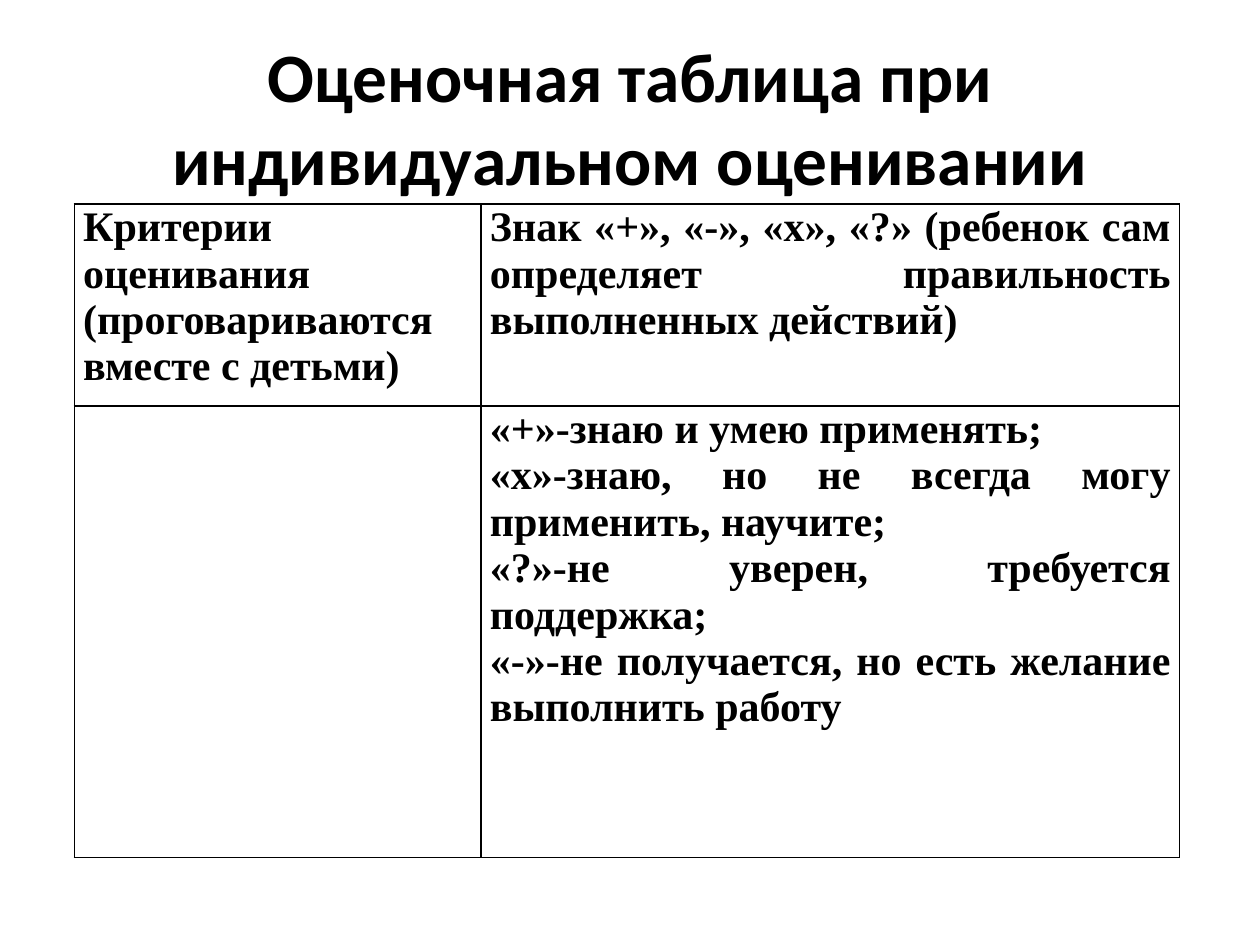
from lxml import etree
from pptx import Presentation
from pptx.dml.color import RGBColor
from pptx.enum import text
from pptx.oxml import ns
from pptx.util import Pt

BLACK = RGBColor(0, 0, 0)
WHITE = RGBColor(255, 255, 255)

TITLE = "Оценочная таблица при индивидуальном оценивании"
ROWS = [
    [
        ["Критерии оценивания (проговариваются вместе с детьми)"],
        ["Знак «+», «-», «х», «?» (ребенок сам определяет правильность выполненных действий)"],
    ],
    [
        [],
        [
            "«+»-знаю и умею применять;",
            "«х»-знаю, но не всегда могу применить, научите;",
            "«?»-не уверен, требуется поддержка;",
            "«-»-не получается, но есть желание выполнить работу",
        ],
    ],
]


def write_text(frame, lines, *, font, size, align, color=BLACK, bold=True):
    """Fill a text frame with one paragraph per line."""
    for index, line in enumerate(lines):
        para = frame.paragraphs[0] if index == 0 else frame.add_paragraph()
        para.alignment = align
        span = para.add_run()
        span.text = line
        span.font.name = font
        span.font.size = Pt(size)
        span.font.bold = bold
        span.font.color.rgb = color


def set_borders(cell, color=BLACK, width=1):
    """Draw a solid line on all four sides; borders precede the cell fill."""
    properties = cell._tc.get_or_add_tcPr()
    for index, side in enumerate(("lnL", "lnR", "lnT", "lnB")):
        line = etree.Element(ns.qn(f"a:{side}"), w=str(Pt(width)))
        fill = etree.SubElement(line, ns.qn("a:solidFill"))
        etree.SubElement(fill, ns.qn("a:srgbClr"), val=str(color))
        properties.insert(index, line)


def add_title(page, left, top, width, height):
    box = page.shapes.add_textbox(Pt(left), Pt(top), Pt(width), Pt(height))
    frame = box.text_frame
    frame.word_wrap = True
    frame.vertical_anchor = text.MSO_ANCHOR.MIDDLE
    write_text(frame, [TITLE], font="Calibri", size=39.6, align=text.PP_ALIGN.CENTER)


def add_criteria_table(page, left, top, column_widths, row_heights):
    table = page.shapes.add_table(
        len(row_heights), len(column_widths), Pt(left), Pt(top),
        Pt(sum(column_widths)), Pt(sum(row_heights)),
    ).table
    for column, width in zip(table.columns, column_widths):
        column.width = Pt(width)
    for row, height, contents in zip(table.rows, row_heights, ROWS):
        row.height = Pt(height)
        for cell, lines in zip(row.cells, contents):
            cell.fill.solid()
            cell.fill.fore_color.rgb = WHITE
            cell.margin_left = cell.margin_right = Pt(5)
            cell.margin_top = cell.margin_bottom = Pt(0)
            set_borders(cell)
            write_text(cell.text_frame, lines, font="Times New Roman", size=24,
                       align=text.PP_ALIGN.JUSTIFY)


def main():
    deck = Presentation()
    deck.slide_width, deck.slide_height = Pt(720), Pt(540)
    page = deck.slides.add_slide(deck.slide_layouts[6])

    # Heading
    add_title(page, 36, 21.6, 648, 90)
    # Criteria and the signs for self-assessment
    add_criteria_table(page, 42.5, 116.7, [232.5, 399], [110.7, 258])

    deck.save("out.pptx")


if __name__ == "__main__":
    main()
